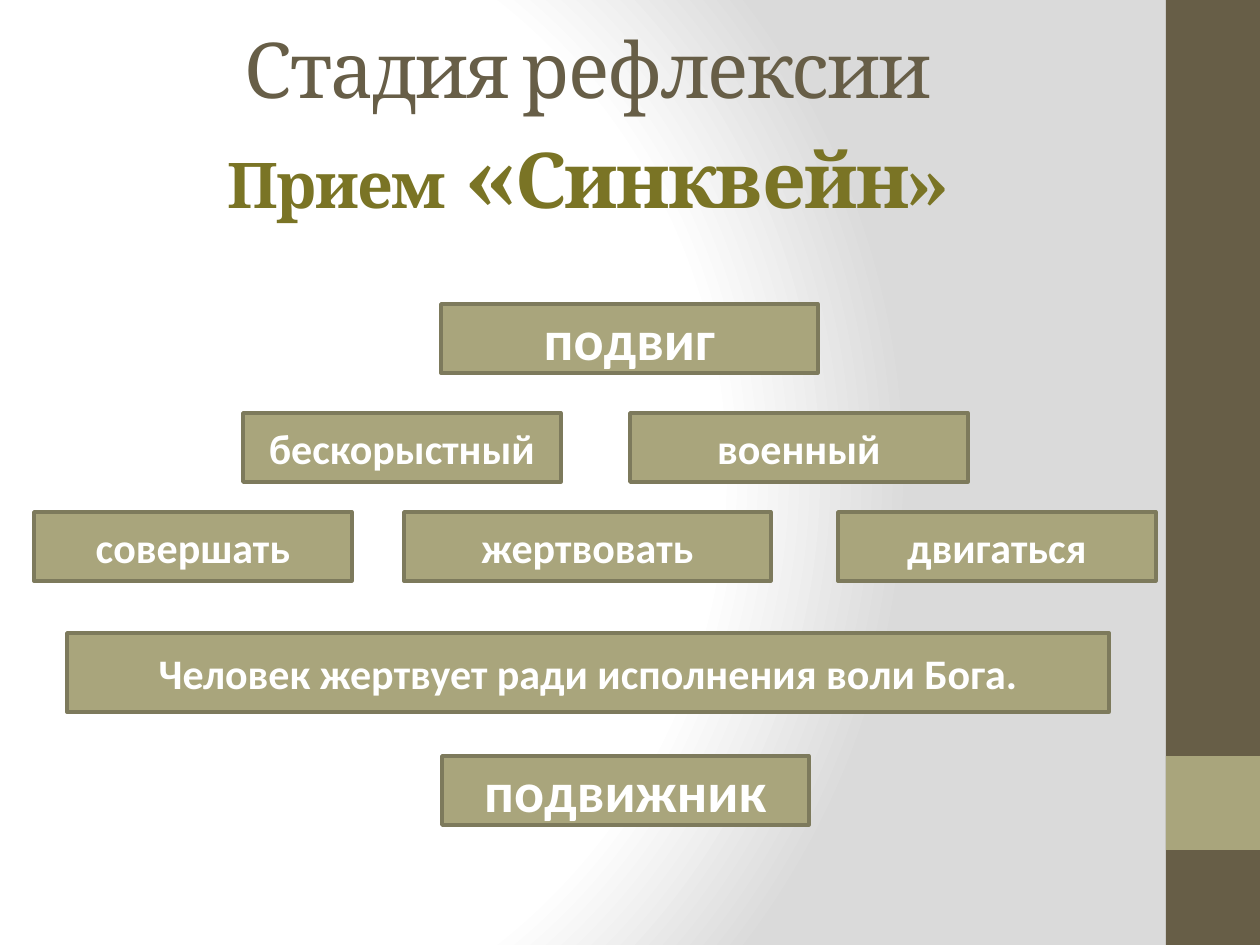
from pptx import Presentation
from pptx.dml.color import RGBColor
from pptx.enum.shapes import MSO_SHAPE
from pptx.enum.text import MSO_ANCHOR, PP_ALIGN
from pptx.oxml import parse_xml
from pptx.util import Pt

EMU_PER_PX = 914400 / 126
SLIDE_WIDTH, SLIDE_HEIGHT = 1260, 945
RECTANGLE = MSO_SHAPE.RECTANGLE
TOP, MIDDLE = MSO_ANCHOR.TOP, MSO_ANCHOR.MIDDLE
CENTER = PP_ALIGN.CENTER

WHITE = RGBColor(0xFF, 0xFF, 0xFF)
GREY = RGBColor(0xDA, 0xDA, 0xDA)
BROWN = RGBColor(0x67, 0x5E, 0x47)
OLIVE = RGBColor(0x7A, 0x74, 0x25)
KHAKI = RGBColor(0xA9, 0xA5, 0x7C)
KHAKI_DARK = RGBColor(0x7D, 0x7A, 0x5C)

HEADING_FONT, BODY_FONT = "Cambria", "Calibri"
DRAWING_NAMESPACE = "http://schemas.openxmlformats.org/drawingml/2006/main"

# Each title line is a list of (text, size, color, bold)
TITLE_LINES = [
    [("Стадия рефлексии", 44, BROWN, False)],
    [("Прием", 36, OLIVE, True), (" «", 54, OLIVE, True),
     ("Синквейн»", 44, OLIVE, True)],
]

# Each row is top, height, text size, then (left, width, text) for each box
CINQUAIN_ROWS = [
    (304, 69, 32, [(441, 377, "подвиг")]),
    (413, 69, 24, [(243, 318, "бескорыстный"), (630, 338, "военный")]),
    (512, 69, 24, [(34, 318, "совершать"), (404, 367, "жертвовать"),
                   (838, 318, "двигаться")]),
    (633, 79, 24, [(67, 1042, "Человек жертвует ради исполнения воли Бога.")]),
    (756, 69, 32, [(442, 367, "подвижник")]),
]


def px(length):
    return round(length * EMU_PER_PX)


class SlideBuilder:
    def __init__(self, slide):
        self.slide = slide

    def background(self, stops, center):
        """Fill with a circular gradient; stops and center are in percent."""
        stop_xml = "".join(
            f'<a:gs pos="{position * 1000}"><a:srgbClr val="{color}"/></a:gs>'
            for position, color in stops)
        left, top, right, bottom = (edge * 1000 for edge in center)
        gradient = parse_xml(
            f'<a:gradFill xmlns:a="{DRAWING_NAMESPACE}" rotWithShape="1">'
            f'<a:gsLst>{stop_xml}</a:gsLst><a:path path="circle">'
            f'<a:fillToRect l="{left}" t="{top}" r="{right}" b="{bottom}"/>'
            '</a:path></a:gradFill>')
        self.slide.background.fill.solid()
        properties = self.slide._element.cSld.bg.bgPr
        properties.replace(properties[0], gradient)

    def rectangle(self, left, top, width, height, fill, line=None):
        shape = self.slide.shapes.add_shape(
            RECTANGLE, px(left), px(top), px(width), px(height))
        shape.shadow.inherit = False
        shape.fill.solid()
        shape.fill.fore_color.rgb = fill
        if line is None:
            shape.line.fill.background()
        else:
            shape.line.color.rgb = line
            shape.line.width = Pt(2)
        return shape

    def run(self, paragraph, text, font_name, size, color, bold):
        run = paragraph.add_run()
        run.text = text
        run.font.name = font_name
        run.font.size = Pt(size)
        run.font.color.rgb = color
        run.font.bold = bold
        return run

    def word_box(self, left, top, width, height, text, size):
        shape = self.rectangle(left, top, width, height, KHAKI, KHAKI_DARK)
        frame = shape.text_frame
        frame.word_wrap = True
        frame.vertical_anchor = MIDDLE
        paragraph = frame.paragraphs[0]
        paragraph.alignment = CENTER
        self.run(paragraph, text, BODY_FONT, size, WHITE, True)

    def title(self, left, top, width, height, lines):
        box = self.slide.shapes.add_textbox(
            px(left), px(top), px(width), px(height))
        frame = box.text_frame
        frame.word_wrap = True
        frame.vertical_anchor = TOP
        frame.margin_top = frame.margin_bottom = 0
        paragraph = frame.paragraphs[0]
        paragraph.alignment = CENTER
        for index, line in enumerate(lines):
            if index:
                paragraph.add_line_break()
            for text, size, color, bold in line:
                run = self.run(paragraph, text, HEADING_FONT, size, color, bold)
                run.font._element.set("spc", "-100")


def main():
    presentation = Presentation()
    presentation.slide_width = px(SLIDE_WIDTH)
    presentation.slide_height = px(SLIDE_HEIGHT)
    blank_layout = presentation.slide_layouts[6]
    builder = SlideBuilder(presentation.slides.add_slide(blank_layout))

    builder.background([(0, WHITE), (75, WHITE), (100, GREY)],
                       (20, 50, 100, 50))
    sidebar_left = 1166
    sidebar_width = SLIDE_WIDTH - sidebar_left
    builder.rectangle(sidebar_left, 0, sidebar_width, SLIDE_HEIGHT, BROWN)
    builder.rectangle(sidebar_left, 756, sidebar_width, 94, KHAKI)

    builder.title(63, 22, 1050, 233, TITLE_LINES)
    for top, height, size, boxes in CINQUAIN_ROWS:
        for left, width, text in boxes:
            builder.word_box(left, top, width, height, text, size)

    presentation.save("out.pptx")


if __name__ == "__main__":
    main()
